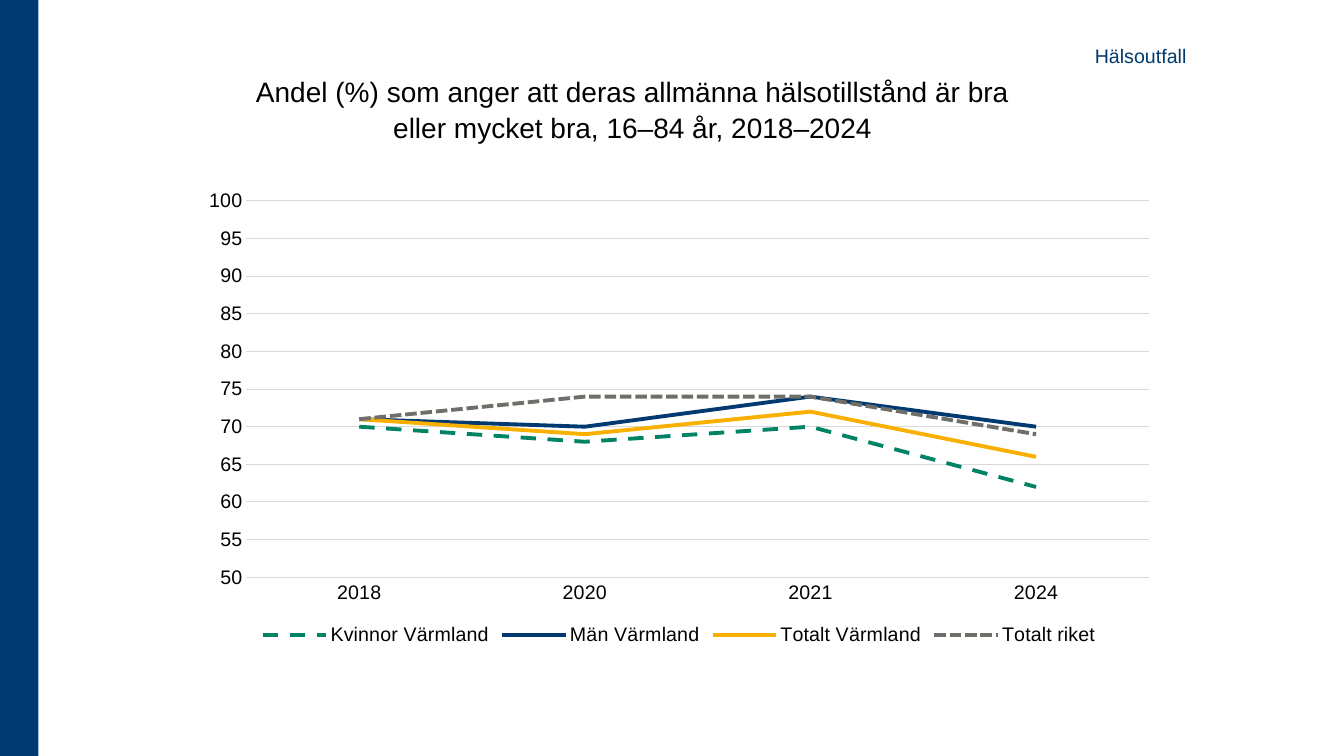
from pptx import Presentation
from pptx.chart.data import CategoryChartData
from pptx.dml.color import RGBColor
from pptx.enum.chart import XL_CHART_TYPE, XL_LEGEND_POSITION, XL_MARKER_STYLE, XL_TICK_MARK
from pptx.enum.dml import MSO_LINE
from pptx.enum.shapes import MSO_SHAPE
from pptx.enum.text import MSO_ANCHOR, MSO_AUTO_SIZE, PP_ALIGN
from pptx.util import Inches, Pt

NAVY = RGBColor(0x00, 0x3A, 0x70)
GREEN = RGBColor(0x00, 0x82, 0x64)
YELLOW = RGBColor(0xF9, 0xB0, 0x00)
GRAY = RGBColor(0x6F, 0x6E, 0x68)
GRID = RGBColor(0xD9, 0xD9, 0xD9)
BLACK = RGBColor(0, 0, 0)
FONT = "Arial"
DASH, SYS_DASH = MSO_LINE.DASH, MSO_LINE.SQUARE_DOT
NO_TICK = XL_TICK_MARK.NONE

YEARS = ["2018", "2020", "2021", "2024"]
SERIES = [
    ("Kvinnor Värmland", (70, 68, 70, 62), GREEN, DASH),
    ("Män Värmland", (71, 70, 74, 70), NAVY, None),
    ("Totalt Värmland", (71, 69, 72, 66), YELLOW, None),
    ("Totalt riket", (71, 74, 74, 69), GRAY, SYS_DASH),
]


def set_font(font, size, color=BLACK):
    font.name = FONT
    font.size = Pt(size)
    font.bold = False
    font.color.rgb = color


prs = Presentation()
prs.slide_width, prs.slide_height = Inches(13.33), Inches(7.5)
s = prs.slides.add_slide(prs.slide_layouts[5])

# Side band
band = s.shapes.add_shape(MSO_SHAPE.RECTANGLE, 0, 0, Inches(0.38), prs.slide_height)
band.shadow.inherit = False
band.fill.solid()
band.fill.fore_color.rgb = NAVY
band.line.fill.background()

# Title
title = s.shapes.title
title.left, title.top = Inches(2.42), Inches(0.14)
title.width, title.height = Inches(7.71), Inches(1.34)
tf = title.text_frame
tf.word_wrap = True
tf.auto_size = MSO_AUTO_SIZE.NONE
tf.vertical_anchor = MSO_ANCHOR.BOTTOM
p = tf.paragraphs[0]
p.alignment = PP_ALIGN.CENTER
p.line_spacing = 1.07
p.space_after = Pt(8)
r = p.add_run()
r.text = "Andel (%) som anger att deras allmänna hälsotillstånd är bra eller mycket bra, 16–84 år, 2018–2024"
set_font(r.font, 20)

# Section label
label = s.shapes.add_textbox(Inches(10.76), Inches(0.39), Inches(2.21), Inches(0.34))
tf = label.text_frame
tf.word_wrap = True
tf.auto_size = MSO_AUTO_SIZE.SHAPE_TO_FIT_TEXT
r = tf.paragraphs[0].add_run()
r.text = "Hälsoutfall"
set_font(r.font, 14, NAVY)

# Line chart
data = CategoryChartData()
data.categories = YEARS
for name, values, _, _ in SERIES:
    data.add_series(name, values)
chart = s.shapes.add_chart(XL_CHART_TYPE.LINE, Inches(1.88), Inches(1.79),
                           Inches(9.71), Inches(4.66), data).chart
set_font(chart.font, 10)
chart.has_title = False
chart.has_legend = True
chart.legend.position = XL_LEGEND_POSITION.BOTTOM
chart.legend.include_in_layout = False
set_font(chart.legend.font, 14)

chart.plots[0].vary_by_categories = False
for series, (_, _, color, dash) in zip(chart.plots[0].series, SERIES):
    series.smooth = False
    series.marker.style = XL_MARKER_STYLE.NONE
    line = series.format.line
    line.color.rgb = color
    line.width = Pt(2.75)
    if dash:
        line.dash_style = dash

cat_axis, val_axis = chart.category_axis, chart.value_axis
for axis in (cat_axis, val_axis):
    axis.major_tick_mark = axis.minor_tick_mark = NO_TICK
    set_font(axis.tick_labels.font, 14)
val_axis.minimum_scale, val_axis.maximum_scale = 50, 100
val_axis.major_unit = 5
val_axis.has_major_gridlines = True
val_axis.format.line.fill.background()
for line in (cat_axis.format.line, val_axis.major_gridlines.format.line):
    line.color.rgb = GRID
    line.width = Pt(0.75)

prs.save("out.pptx")
